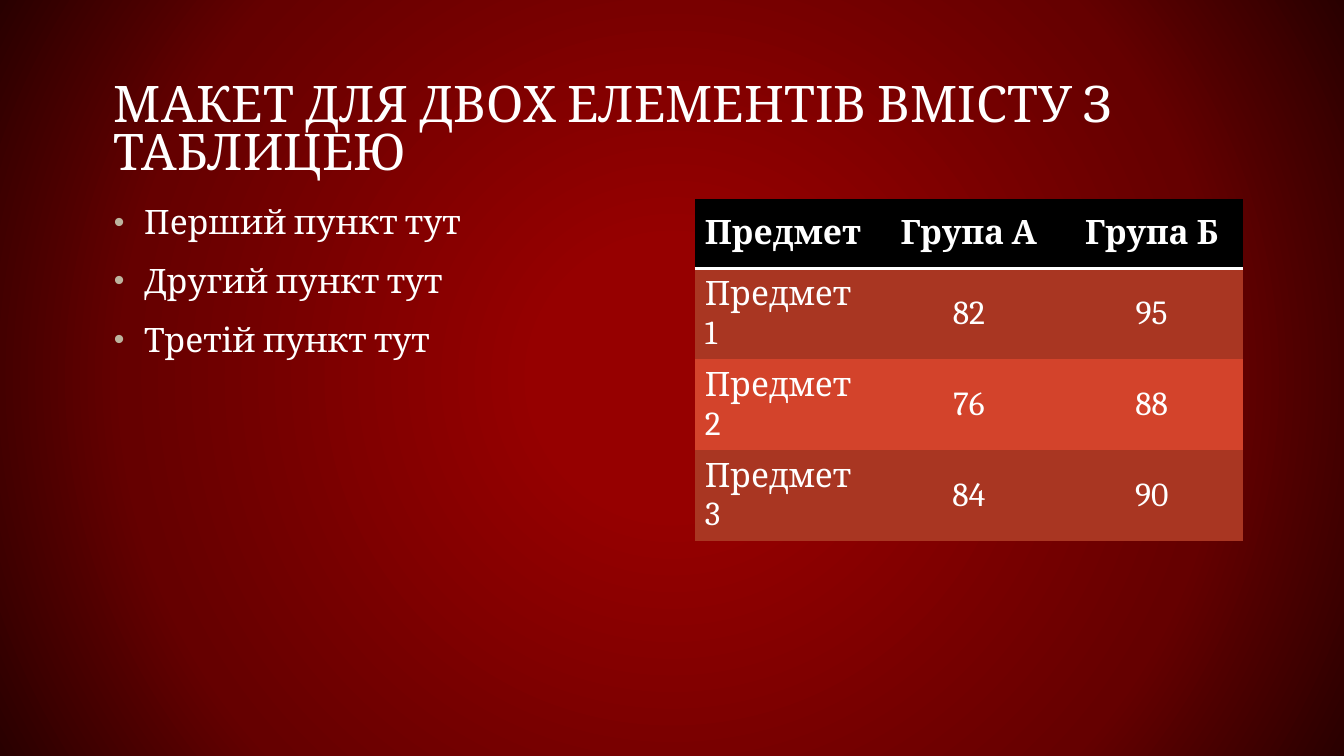
from dataclasses import dataclass

from lxml import etree
from pptx import Presentation
from pptx.dml.color import RGBColor
from pptx.enum.text import MSO_ANCHOR, PP_ALIGN
from pptx.oxml import parse_xml
from pptx.oxml.ns import nsdecls, qn
from pptx.util import Inches, Pt

TOP, MIDDLE, BOTTOM = MSO_ANCHOR.TOP, MSO_ANCHOR.MIDDLE, MSO_ANCHOR.BOTTOM
LEFT, CENTER = PP_ALIGN.LEFT, PP_ALIGN.CENTER
PLAIN_TABLE_STYLE = "{2D5ABB26-0587-4C30-8999-92F81FD0307C}"


@dataclass(frozen=True)
class Theme:
    font: str = "Cambria"
    title_size: int = 36
    body_size: int = 24
    text: str = "FFFFFF"
    bullet: str = "BCB49E"
    header: str = "000000"
    bands: tuple = ("A93622", "D3432B")
    glow: tuple = ((17, "960000"), (71, "650000"), (100, "290000"))


class SlideBuilder:
    def __init__(self, page, theme):
        self.page = page
        self.theme = theme

    def background(self):
        fill = self.page.background.fill
        fill.gradient()
        stops = "".join(
            f'<a:gs pos="{position * 1000}"><a:srgbClr val="{color}"/></a:gs>'
            for position, color in self.theme.glow
        )
        gradient = parse_xml(
            f'<a:gradFill {nsdecls("a")} rotWithShape="1"><a:gsLst>{stops}</a:gsLst>'
            '<a:path path="circle"><a:fillToRect l="50000" t="50000" r="50000" b="50000"/>'
            "</a:path></a:gradFill>"
        )
        default = next(self.page.element.iter(qn("a:gradFill")))
        default.getparent().replace(default, gradient)

    def add_span(self, para, text, size, bold=False):
        span = para.add_run()
        span.text = text
        span.font.name = self.theme.font
        span.font.size = Pt(size)
        span.font.bold = bold
        span.font.color.rgb = RGBColor.from_string(self.theme.text)

    def text_frame(self, left, top, width, height, anchor):
        box = self.page.shapes.add_textbox(
            Inches(left), Inches(top), Inches(width), Inches(height)
        )
        frame = box.text_frame
        frame.word_wrap = True
        frame.vertical_anchor = anchor
        frame.margin_left = frame.margin_right = Inches(0.13)
        frame.margin_top = frame.margin_bottom = Inches(0.07)
        return frame

    def title(self, text, left, top, width, height):
        para = self.text_frame(left, top, width, height, BOTTOM).paragraphs[0]
        para.line_spacing = 0.8
        self.add_span(para, text, self.theme.title_size)

    def bullets(self, items, left, top, width, height):
        frame = self.text_frame(left, top, width, height, TOP)
        for index, item in enumerate(items):
            para = frame.add_paragraph() if index else frame.paragraphs[0]
            para.line_spacing = 0.9
            para.space_before = Pt(16)
            self.add_bullet(para)
            self.add_span(para, item, self.theme.body_size)

    def add_bullet(self, para):
        properties = para._p.get_or_add_pPr()
        properties.set("marL", str(Inches(0.3)))
        properties.set("indent", str(Inches(-0.3)))
        color = etree.SubElement(properties, qn("a:buClr"))
        etree.SubElement(color, qn("a:srgbClr"), val=self.theme.bullet)
        etree.SubElement(properties, qn("a:buSzPct"), val="90000")
        etree.SubElement(properties, qn("a:buFont"), typeface="Arial")
        etree.SubElement(properties, qn("a:buChar"), char="•")

    def table(self, rows, left, top, width, height):
        frame = self.page.shapes.add_table(
            len(rows), len(rows[0]),
            Inches(left), Inches(top), Inches(width), Inches(height),
        )
        grid = frame.table
        grid.horz_banding = False
        next(frame._element.iter(qn("a:tableStyleId"))).text = PLAIN_TABLE_STYLE
        for row_index, row in enumerate(rows):
            for column_index, value in enumerate(row):
                cell = grid.cell(row_index, column_index)
                is_header = row_index == 0
                band = self.theme.bands[(row_index - 1) % 2]
                cell.fill.solid()
                cell.fill.fore_color.rgb = RGBColor.from_string(
                    self.theme.header if is_header else band
                )
                cell.vertical_anchor = MIDDLE
                para = cell.text_frame.paragraphs[0]
                para.alignment = CENTER if column_index else LEFT
                self.add_span(para, value, self.theme.body_size, is_header)
                if is_header:
                    self.underline_cell(cell)

    def underline_cell(self, cell):
        border = parse_xml(
            f'<a:lnB {nsdecls("a")} w="{Pt(2)}"><a:solidFill>'
            f'<a:srgbClr val="{self.theme.text}"/></a:solidFill></a:lnB>'
        )
        cell._tc.get_or_add_tcPr().insert(0, border)


def main():
    deck = Presentation()
    deck.slide_width = Inches(13.33)
    deck.slide_height = Inches(7.5)
    page = deck.slides.add_slide(deck.slide_layouts[6])
    builder = SlideBuilder(page, Theme())
    builder.background()
    builder.title("МАКЕТ ДЛЯ ДВОХ ЕЛЕМЕНТІВ ВМІСТУ З ТАБЛИЦЕЮ", 1, 0.53, 11.33, 1.33)
    builder.bullets(
        ["Перший пункт тут", "Другий пункт тут", "Третій пункт тут"],
        1, 1.97, 5.44, 4.89,
    )
    builder.table(
        [
            ("Предмет", "Група А", "Група Б"),
            ("Предмет 1", "82", "95"),
            ("Предмет 2", "76", "88"),
            ("Предмет 3", "84", "90"),
        ],
        6.89, 1.97, 5.44, 2.78,
    )
    deck.save("out.pptx")


if __name__ == "__main__":
    main()
